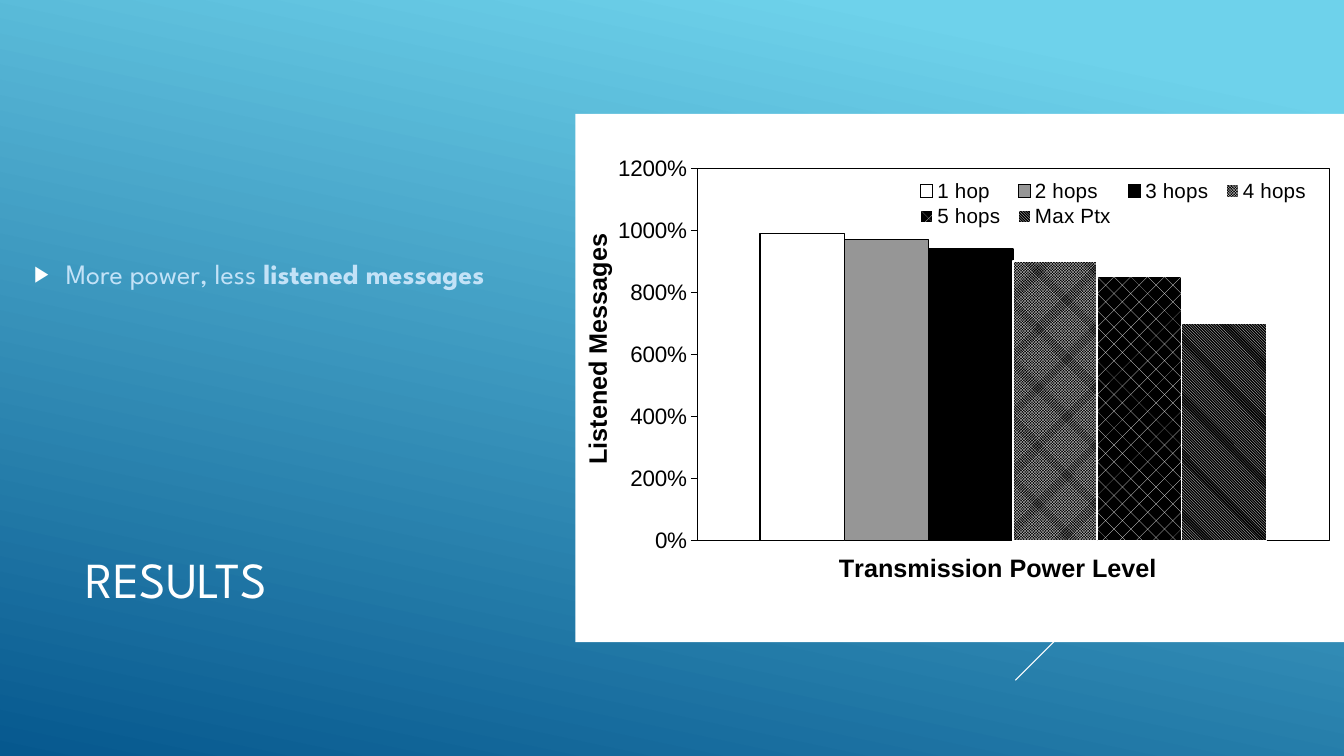
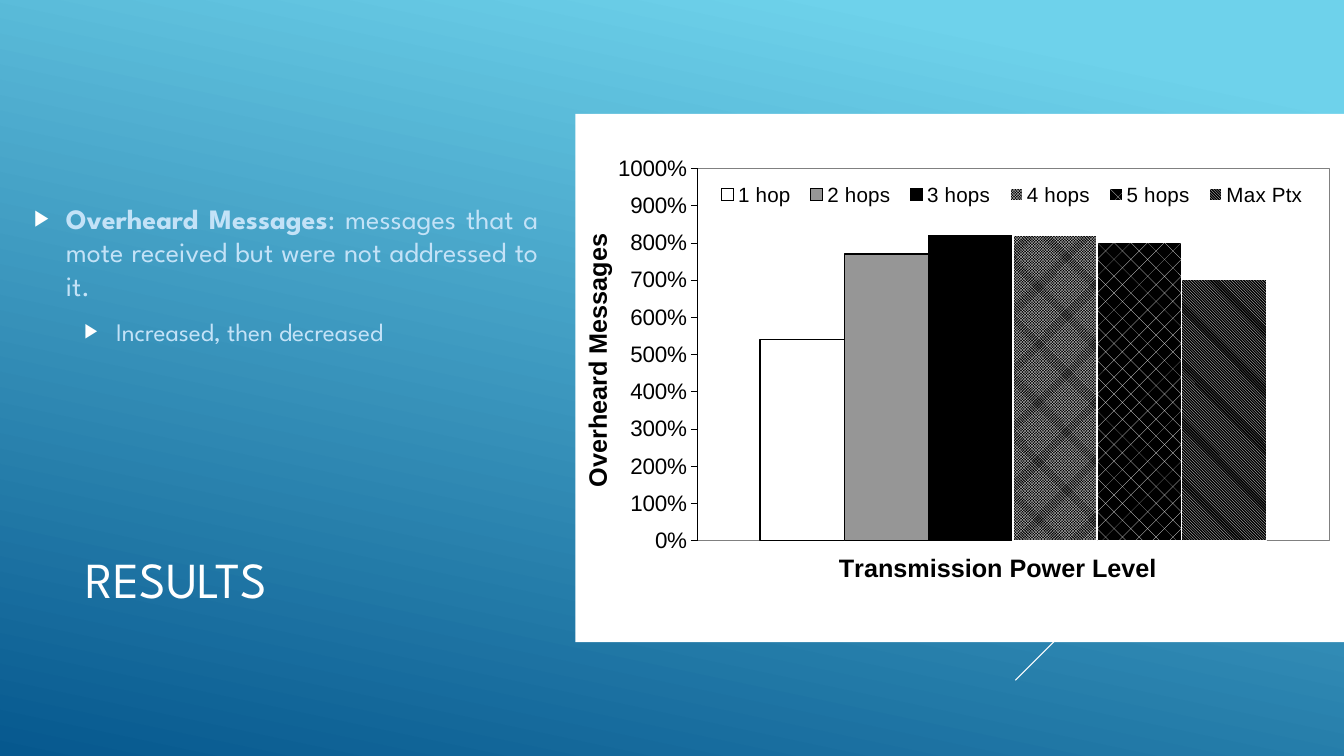
from lxml import etree
from pptx import Presentation
from pptx.chart.data import CategoryChartData
from pptx.dml.color import RGBColor
from pptx.enum.chart import XL_CHART_TYPE, XL_LEGEND_POSITION, XL_TICK_MARK
from pptx.enum.dml import MSO_PATTERN
from pptx.enum.shapes import MSO_CONNECTOR
from pptx.enum.text import MSO_ANCHOR, PP_ALIGN
from pptx.oxml.ns import qn
from pptx.util import Cm, Pt

COLUMNS = XL_CHART_TYPE.COLUMN_CLUSTERED
LEGEND_RIGHT = XL_LEGEND_POSITION.RIGHT
TICK_OUT, TICK_NONE = XL_TICK_MARK.OUTSIDE, XL_TICK_MARK.NONE
STRAIGHT = MSO_CONNECTOR.STRAIGHT
MIDDLE = MSO_ANCHOR.MIDDLE
LEFT, JUSTIFY = PP_ALIGN.LEFT, PP_ALIGN.JUSTIFY
SMALL_CHECKS = MSO_PATTERN.SMALL_CHECKER_BOARD
DIAMONDS = MSO_PATTERN.DOTTED_DIAMOND
DARK_STRIPES = MSO_PATTERN.DARK_DOWNWARD_DIAGONAL

# Shared look
WHITE, BLACK, GREY, FRAME_GREY = "FFFFFF", "000000", "969696", "808080"
SKY, DEEP_BLUE, PALE_BLUE = "6ED2EB", "06588E", "C3E2F7"
TEXT_FONT, CHART_FONT = "League Spartan", "Arial"

# Boxes in cm: left, top, width, height
SLIDE_W, SLIDE_H = 33.87, 19.05
TITLE_BOX = (1.9, 12.47, 23.7, 4.19)
BODY_BOX = (0.61, 1.88, 13.21, 10.03)
CHART_BOX = (14.5, 2.87, 19.37, 13.31)

# Diagonals from the right edge: top, run, line width in points
DIAGONALS = [(8.23, 2.54, 0.75), (8.86, 8.28, 0.75), (9.12, 5.26, 0.75),
             (8.69, 4.85, 2.25), (10.24, 3.53, 2.25)]

# Chart parts as fractions of the chart: x, y, width, height
PLOT_AREA = (0.158, 0.103, 0.823, 0.705)
POWER_TITLE_AT = (0.337, 0.82)
MESSAGES_TITLE_AT = (0.001, 0.218)

# Series: name, fill colour or pattern, line colour, line width
SERIES_STYLES = [
    ("1 hop", WHITE, BLACK, 1),
    ("2 hops", GREY, BLACK, 1),
    ("3 hops", BLACK, BLACK, 1),
    ("4 hops", SMALL_CHECKS, WHITE, 1.5),
    ("5 hops", DIAMONDS, WHITE, 0.75),
    ("Max Ptx", DARK_STRIPES, WHITE, 0.75),
]

# Body paragraphs: level, runs of (text, bold)
RESULTS = [
    dict(
        body=[(0, [("More power, less ", False), ("listened messages", True)])],
        measure="Listened Messages", values=[9.9, 9.7, 9.4, 9, 8.5, 7],
        top=12, step=2, legend_area=(0.435, 0.12, 0.53, 0.1), frame=BLACK),
    dict(
        body=[(0, [("Overheard Messages", True),
                   (": messages that a mote received but were not "
                    "addressed to it.", False)]),
              (1, [("Increased, then decreased", False)])],
        measure="Overheard Messages", values=[5.4, 7.7, 8.2, 8.2, 8, 7],
        top=10, step=1, legend_area=(0.173, 0.123, 0.79, 0.06),
        frame=FRAME_GREY),
]


def rgb(code):
    return RGBColor.from_string(code)


def cm_box(box):
    return [Cm(length) for length in box]


def style_font(font, size, color, name, bold=False):
    font.size, font.name, font.bold = Pt(size), name, bold
    font.color.rgb = rgb(color)


def style_line(line, color, width):
    line.color.rgb = rgb(color)
    line.width = Pt(width)


def add_child(parent, tag, **attributes):
    return etree.SubElement(parent, qn(tag), **attributes)


def paint_background(master):
    fill = master.background.fill
    fill.gradient()
    fill.gradient_angle = 258
    for stop, color, position in zip(fill.gradient_stops, (SKY, DEEP_BLUE), (0.1, 1)):
        stop.color.rgb = rgb(color)
        stop.position = position


def add_diagonals(slide, right):
    for top, run, width in DIAGONALS:
        diagonal = slide.shapes.add_connector(
            STRAIGHT, Cm(right), Cm(top), Cm(right - run), Cm(top + run))
        style_line(diagonal.line, WHITE, width)
        add_child(diagonal._element.spPr, "a:effectLst")


def place_title(slide, box, text):
    title = slide.shapes.title
    title.left, title.top, title.width, title.height = cm_box(box)
    title.text_frame.vertical_anchor = MIDDLE
    paragraph = title.text_frame.paragraphs[0]
    paragraph.alignment = LEFT
    run = paragraph.add_run()
    run.text = text
    style_font(run.font, 36, WHITE, TEXT_FONT)


def add_bullet(paragraph, level):
    properties = paragraph._p.get_or_add_pPr()
    properties.set("marL", str(Cm(0.8 + 1.27 * level)))
    properties.set("indent", str(-Cm(0.8)))
    add_child(add_child(properties, "a:buClr"), "a:srgbClr", val=WHITE)
    add_child(properties, "a:buSzPct", val="80000")
    add_child(properties, "a:buFont", typeface=CHART_FONT)
    add_child(properties, "a:buChar", char="▶")


def add_body(slide, box, paragraphs):
    frame = slide.shapes.add_textbox(*cm_box(box)).text_frame
    frame.word_wrap = True
    frame.vertical_anchor = MIDDLE
    for index, (level, runs) in enumerate(paragraphs):
        paragraph = frame.add_paragraph() if index else frame.paragraphs[0]
        paragraph.level = level
        paragraph.alignment = JUSTIFY
        paragraph.space_before = Pt(4 if index else 0)
        paragraph.space_after = Pt(6)
        add_bullet(paragraph, level)
        for text, bold in runs:
            run = paragraph.add_run()
            run.text = text
            style_font(run.font, 20 - 2 * level, PALE_BLUE, TEXT_FONT, bold)


def set_layout(part, area, inner=False):
    """Fix a chart part at fractions of the chart."""
    for old in part.findall(qn("c:layout")):
        part.remove(old)
    layout = etree.Element(qn("c:layout"))
    manual = add_child(layout, "c:manualLayout")
    if inner:
        add_child(manual, "c:layoutTarget", val="inner")
    for mode in ("c:xMode", "c:yMode"):
        add_child(manual, mode, val="edge")
    for tag, value in zip(("c:x", "c:y", "c:w", "c:h"), area):
        add_child(manual, tag, val=str(value))
    follower = next(child for child in part
                    if child.tag in (qn("c:overlay"), qn("c:barChart")))
    follower.addprevious(layout)


def solid(parent, color):
    add_child(add_child(parent, "a:solidFill"), "a:srgbClr", val=color)


def frame_chart(chart, frame_color):
    """White chart ground and an outlined plot area."""
    space = chart._chartSpace
    ground = etree.Element(qn("c:spPr"))
    solid(ground, WHITE)
    add_child(add_child(ground, "a:ln"), "a:noFill")
    space.find(qn("c:txPr")).addprevious(ground)
    plot_area = space.find(".//" + qn("c:plotArea"))
    set_layout(plot_area, PLOT_AREA, inner=True)
    border = add_child(plot_area, "c:spPr")
    add_child(border, "a:noFill")
    solid(add_child(border, "a:ln", w=str(Pt(0.25))), frame_color)


def title_axis(axis, text, at, rotation):
    run = axis.axis_title.text_frame.paragraphs[0].add_run()
    run.text = text
    style_font(run.font, 18, BLACK, CHART_FONT, True)
    element = axis.axis_title._element
    body = element.find(".//" + qn("a:bodyPr"))
    body.set("rot", str(rotation * 60000))
    body.set("vert", "horz")
    set_layout(element, at)


def style_axes(chart, measure, top, step):
    power, messages = chart.category_axis, chart.value_axis
    power.visible = False
    title_axis(power, "Transmission Power Level", POWER_TITLE_AT, 0)
    title_axis(messages, measure, MESSAGES_TITLE_AT, -90)
    messages.minimum_scale, messages.maximum_scale = 0, top
    messages.major_unit = step
    messages.major_tick_mark, messages.minor_tick_mark = TICK_OUT, TICK_NONE
    messages.tick_labels.number_format = "0%"
    messages.tick_labels.number_format_is_linked = False
    style_font(messages.tick_labels.font, 16, BLACK, CHART_FONT)
    style_line(messages.format.line, BLACK, 0.25)
    # White gridlines would cut into the plot frame
    messages.has_major_gridlines = False


def style_series(plot):
    plot.gap_width, plot.overlap = 150, 0
    plot.vary_by_categories = False
    for series, (_, fill_style, line_color, width) in zip(plot.series, SERIES_STYLES):
        series.invert_if_negative = False
        fill = series.format.fill
        if isinstance(fill_style, str):
            fill.solid()
            fill.fore_color.rgb = rgb(fill_style)
        else:
            fill.patterned()
            fill.pattern = fill_style
            fill.fore_color.rgb = rgb(WHITE)
            fill.back_color.rgb = rgb(BLACK)
        style_line(series.format.line, line_color, width)


def add_hops_chart(slide, box, measure, values, top, step, legend_area, frame):
    data = CategoryChartData(number_format="0%")
    data.categories = ["1"]
    for (name, *_), value in zip(SERIES_STYLES, values):
        data.add_series(name, [value])
    chart = slide.shapes.add_chart(COLUMNS, *cm_box(box), data).chart
    chart.has_title = False
    style_font(chart.font, 10, BLACK, CHART_FONT)
    style_axes(chart, measure, top, step)
    style_series(chart.plots[0])
    chart.has_legend = True
    chart.legend.position = LEGEND_RIGHT
    chart.legend.include_in_layout = False
    style_font(chart.legend.font, 14.7, BLACK, CHART_FONT)
    set_layout(chart.legend._element, legend_area)
    frame_chart(chart, frame)


def add_results_slide(deck, body, **chart_parts):
    slide = deck.slides.add_slide(deck.slide_layouts[5])
    add_diagonals(slide, SLIDE_W)
    place_title(slide, TITLE_BOX, "RESULTS")
    add_body(slide, BODY_BOX, body)
    add_hops_chart(slide, CHART_BOX, **chart_parts)


def main():
    deck = Presentation()
    deck.slide_width, deck.slide_height = Cm(SLIDE_W), Cm(SLIDE_H)
    paint_background(deck.slide_master)
    for result in RESULTS:
        add_results_slide(deck, **result)
    deck.save("out.pptx")


if __name__ == "__main__":
    main()
